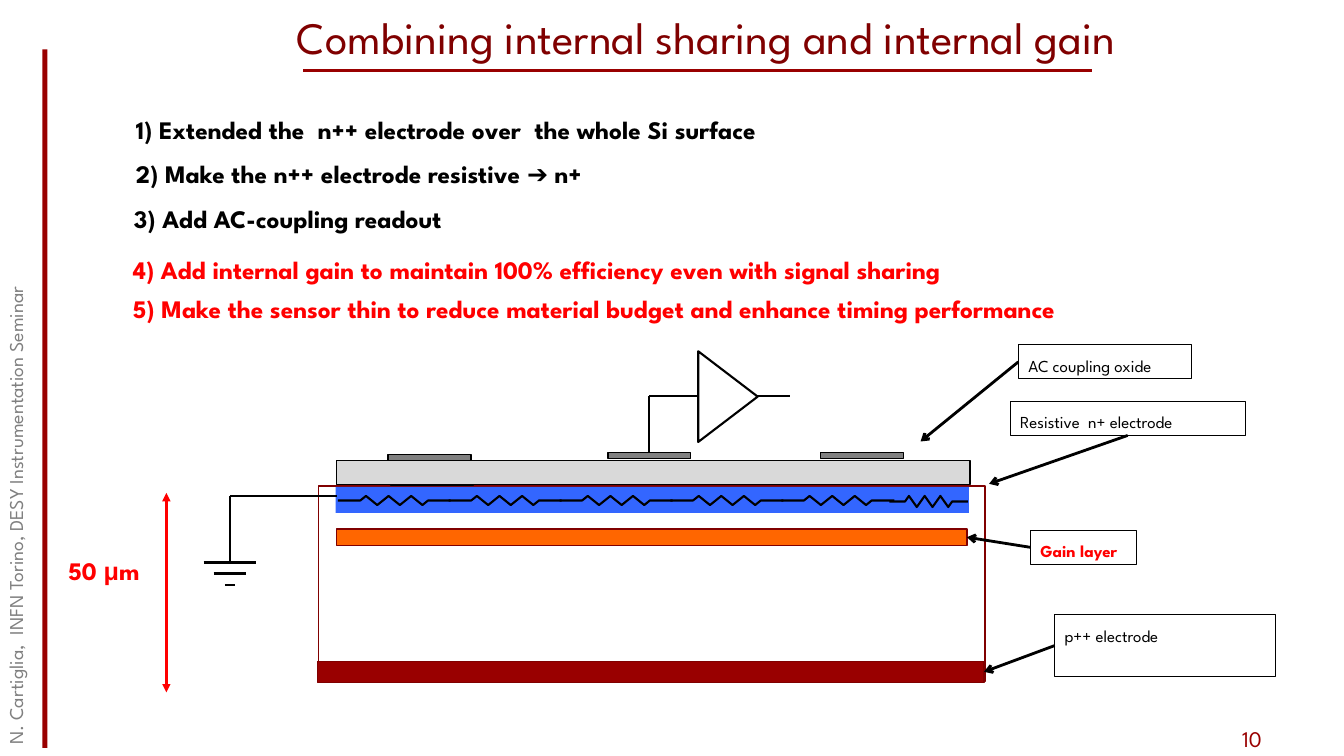
from collections import namedtuple

from lxml.etree import SubElement
from pptx import Presentation
from pptx.dml.color import RGBColor
from pptx.enum.shapes import MSO_CONNECTOR as Connector, MSO_SHAPE as Shape
from pptx.enum.text import MSO_ANCHOR as Anchor, PP_ALIGN as Align
from pptx.oxml.ns import qn
from pptx.util import Inches, Pt

BLACK = RGBColor(0x00, 0x00, 0x00)
WHITE = RGBColor(0xFF, 0xFF, 0xFF)
GREY = RGBColor(0x80, 0x80, 0x80)
LIGHT_GREY = RGBColor(0xD9, 0xD9, 0xD9)
CRIMSON = RGBColor(0x99, 0x00, 0x00)
MAROON = RGBColor(0x80, 0x00, 0x00)
RED = RGBColor(0xFF, 0x00, 0x00)
BLUE = RGBColor(0x33, 0x66, 0xFF)
ORANGE = RGBColor(0xFF, 0x66, 0x00)
FONT = "League Spartan"
TOP, LEFT, BOTTOM, RIGHT = range(4)

Box = namedtuple("Box", "left top width height")


def place(box, left, top, width, height):
    """Return a box offset from the corner of another box."""
    return Box(box.left + left, box.top + top, width, height)


def add_block(page, box, fill=None, line=None, weight=1, kind=Shape.RECTANGLE):
    """Add a flat shape with an optional fill and outline."""
    block = page.shapes.add_shape(kind, *map(Inches, box))
    block.shadow.inherit = False
    if fill is None:
        block.fill.background()
    else:
        block.fill.solid()
        block.fill.fore_color.rgb = fill
    if line is None:
        block.line.fill.background()
    else:
        block.line.color.rgb = line
        block.line.width = Pt(weight)
    return block


def add_line(page, start, end, color=BLACK, weight=1.5, head=None, tail=None):
    """Add a straight line with optional arrowheads."""
    line = page.shapes.add_connector(Connector.STRAIGHT, *map(Inches, start + end))
    line.line.color.rgb = color
    line.line.width = Pt(weight)
    stroke = line.line._get_or_add_ln()
    for tag, arrow in (("a:headEnd", head), ("a:tailEnd", tail)):
        if arrow:
            SubElement(stroke, qn(tag)).set("type", arrow)
    SubElement(line._element.spPr, qn("a:effectLst"))
    return line


def write(para, text, size, color, bold=False, font=FONT):
    """Add one run to a paragraph."""
    span = para.add_run()
    span.text = text
    span.font.name = font
    span.font.size = Pt(size)
    span.font.color.rgb = color
    span.font.bold = bold


def add_text(page, box, text, size, color, bold=False, spacing=None):
    """Add a wrapped text box holding one paragraph and return it."""
    label = page.shapes.add_textbox(*map(Inches, box))
    label.text_frame.word_wrap = True
    para = label.text_frame.paragraphs[0]
    para.line_spacing = spacing
    write(para, text, size, color, bold)
    return label


def add_frame(page, box):
    """Add the side bar, the seminar name and the page number."""
    add_block(page, place(box, 0.42, 0.49, 0.05, 6.93), CRIMSON)
    seminar = add_text(page, place(box, -3.49, 3.63, 7.33, 0.38),
                       "N. Cartiglia,  INFN Torino, DESY Instrumentation Seminar", 14, GREY)
    seminar.rotation = 270
    number = add_text(page, place(box, 12.22, 7.15, 0.81, 0.35), "10", 16, CRIMSON)
    number.text_frame.vertical_anchor = Anchor.MIDDLE


def add_heading(page, box):
    """Add the underlined slide title."""
    add_line(page, (box.left + 2.04, box.top + 0.75), (box.left + 9.86, box.top + 0.75), CRIMSON, 2)
    frame = add_text(page, box, "Combining internal sharing and internal gain", 32, MAROON).text_frame
    frame.vertical_anchor = Anchor.BOTTOM
    frame.margin_top = Inches(0.04)
    frame.paragraphs[0].alignment = Align.CENTER


def add_steps(page, box):
    """Add the five numbered design steps."""
    steps = (
        (0.03, 0, "1) Extended the  n++ electrode over  the whole Si surface"),
        (0.03, 0.44, "2) Make the n++ electrode resistive ➔ n+"),
        (0.01, 0.89, "3) Add AC-coupling readout"),
    )
    for left, top, text in steps:
        add_text(page, place(box, left, top, box.width, 0.45), text, 18, BLACK, True, 1.3)
    gain = add_text(page, place(box, 0, 1.39, box.width, 0.85),
                    "4) Add internal gain to maintain 100% efficiency even with signal sharing",
                    18, RED, True, 1.3)
    para = gain.text_frame.add_paragraph()
    para.line_spacing = 1.3
    write(para, "5) Make the sensor thin to reduce material budget and enhance timing performance",
          18, RED, True)


def add_resistor(page, box):
    """Add a zigzag resistor with straight leads."""
    zigzag = ((0.2, 0.5), (0.25, 0), (0.35, 1), (0.45, 0), (0.55, 1),
              (0.65, 0), (0.75, 1), (0.8, 0.5), (1, 0.5))
    points = [(Inches(box.left + x * box.width), Inches(box.top + y * box.height)) for x, y in zigzag]
    builder = page.shapes.build_freeform(Inches(box.left), Inches(box.top + box.height / 2))
    builder.add_line_segments(points, close=False)
    resistor = builder.convert_to_shape()
    resistor.shadow.inherit = False
    resistor.fill.background()
    resistor.line.color.rgb = BLACK
    resistor.line.width = Pt(1.5)


def add_sensor(page, box):
    """Add the sensor layers; return the middle pad, gain layer and back electrode."""
    add_block(page, place(box, 0.01, 0.33, 6.61, 1.94), line=MAROON)
    for left, top in ((0.72, 0.27), (2.9, 0.25), (4.96, 0.25)):
        add_block(page, place(box, left, top, 0.82, 0.06), GREY, BLACK)
    back = add_block(page, place(box, 0, 2.07, 6.61, 0.21), CRIMSON, MAROON)
    add_block(page, place(box, 0.19, 0.08, 6.28, 0.24), LIGHT_GREY, BLACK)
    pads = [add_block(page, place(box, left, top, 0.82, 0.06), GREY, BLACK)
            for left, top in ((0.7, 0.02), (2.88, 0), (4.99, 0))]
    add_block(page, place(box, 0.18, 0.34, 6.28, 0.26), BLUE)
    for index in range(5):
        add_resistor(page, place(box, 0.2 + 1.1 * index, 0.43, 1.12, 0.09))
    add_resistor(page, place(box, 5.67, 0.43, 0.78, 0.11))
    gain = add_block(page, place(box, 0.19, 0.76, 6.25, 0.16), ORANGE, MAROON)
    return pads[1], gain, back


def add_amplifier(page, box, pad):
    """Add the amplifier symbol wired to its readout pad."""
    middle = box.top + box.height / 2
    add_line(page, (box.left, middle), (box.left + box.width, middle))
    triangle = add_block(page, place(box, 0.33, 0.16, 0.9, 0.59), WHITE, BLACK, 1.5,
                         Shape.ISOSCELES_TRIANGLE)
    triangle.rotation = 90
    wire = add_line(page, (box.left, middle), (box.left, middle + 0.56))
    wire.end_connect(pad, TOP)


def add_ground(page, box):
    """Add the ground symbol and its wire to the resistive layer."""
    center = box.left + 0.27
    add_line(page, (center, box.top), (box.left + box.width, box.top))
    add_line(page, (center, box.top), (center, box.top + 0.66))
    for index, half in enumerate((0.26, 0.16, 0.05)):
        height = box.top + 0.66 + 0.11 * index
        add_line(page, (center - half, height), (center + half, height))


def add_callout(page, box, text, side, tip, color=BLACK, bold=False, target=None):
    """Add a framed label with an arrow from one side to a tip or target."""
    label = add_block(page, box, line=BLACK, weight=0.75)
    frame = label.text_frame
    frame.word_wrap = True
    frame.vertical_anchor = Anchor.TOP
    para = frame.paragraphs[0]
    para.alignment = Align.LEFT
    para.line_spacing = 1.3
    write(para, text, 12, color, bold)
    arrow = add_line(page, (box.left, box.top), tip, weight=2, tail="arrow")
    arrow.begin_connect(label, side)
    if target is not None:
        arrow.end_connect(target, RIGHT)


def add_thickness(page, box):
    """Add the sensor thickness and its double arrow."""
    right = box.left + box.width
    add_line(page, (right, box.top), (right, box.top + box.height), RED, 2, "triangle", "triangle")
    label = add_text(page, place(box, 0, 0.48, 0.94, 0.45), "50 ", 18, RED, True, 1.3)
    label.text_frame.word_wrap = False
    para = label.text_frame.paragraphs[0]
    write(para, "μ", 18, RED, True, "Arial")
    write(para, "m", 18, RED, True)


def main():
    """Build the slide and save the deck."""
    deck = Presentation()
    deck.slide_width, deck.slide_height = Inches(13.33), Inches(7.5)
    page = deck.slides.add_slide(deck.slide_layouts[6])
    add_frame(page, Box(0, 0, 13.33, 7.5))
    add_heading(page, Box(0.97, -0.05, 12.08, 0.73))
    add_steps(page, Box(1.22, 0.99, 11.73, 2.24))
    pad, gain, back = add_sensor(page, Box(3.15, 4.49, 6.62, 2.28))
    add_amplifier(page, Box(6.44, 3.48, 1.4, 0.9), pad)
    add_ground(page, Box(2.01, 4.92, 1.33, 0.88))
    add_callout(page, Box(10.1, 3.42, 1.72, 0.34), "AC coupling oxide", LEFT, (9.13, 4.38))
    add_callout(page, Box(10.02, 3.98, 2.33, 0.34), "Resistive  n+ electrode", BOTTOM, (9.81, 4.8))
    add_callout(page, Box(10.22, 5.26, 1.05, 0.34), "Gain layer", LEFT, (9.59, 5.33), RED, True, gain)
    add_callout(page, Box(10.46, 6.1, 2.19, 0.61), "p++ electrode", LEFT, (9.76, 6.67), target=back)
    add_thickness(page, Box(0.58, 4.89, 1.07, 1.98))
    deck.save("out.pptx")


if __name__ == "__main__":
    main()
